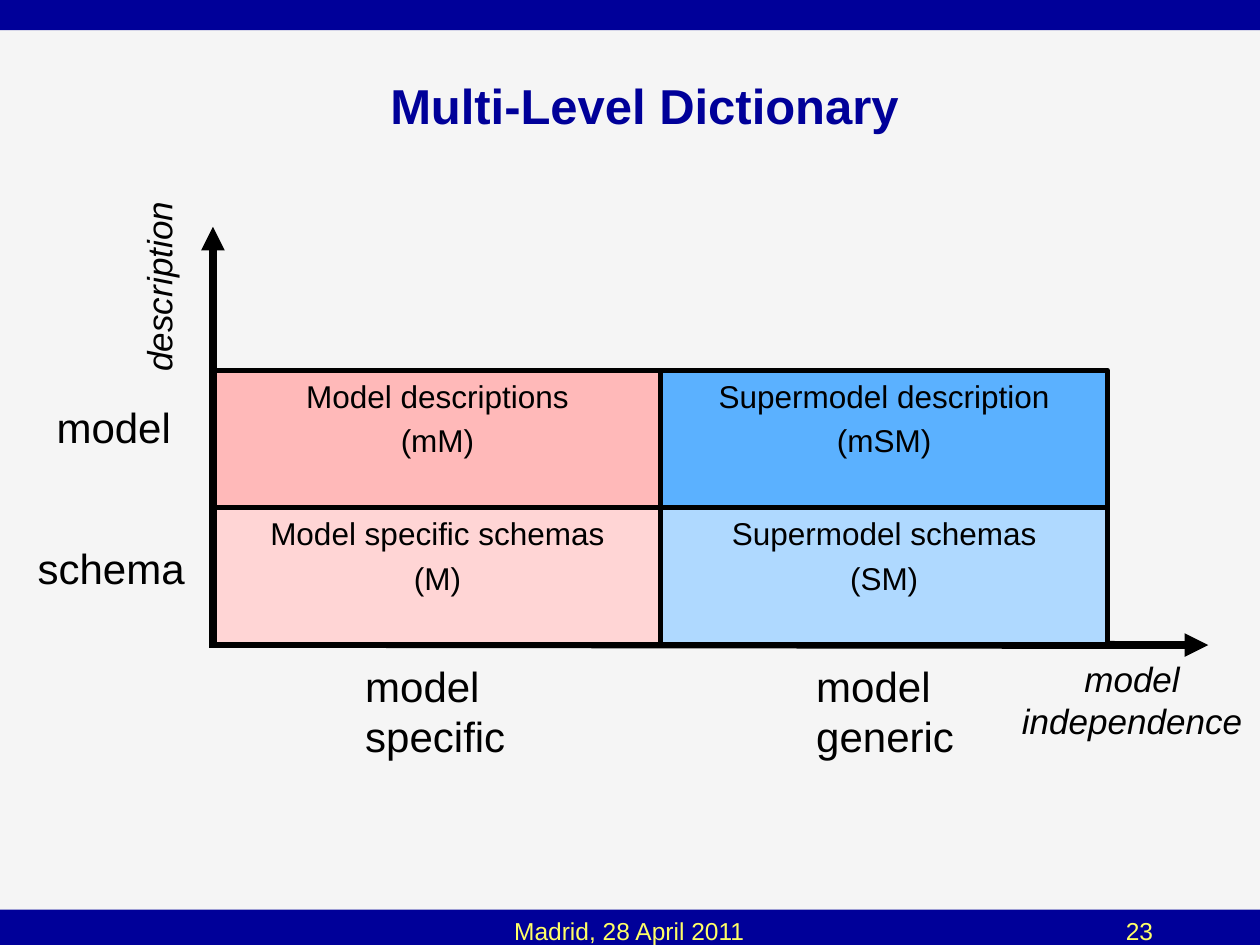
"""Build the Multi-Level Dictionary slide: a two-by-two matrix on two axes."""
import lxml.etree
import pptx
import pptx.dml.color
import pptx.enum.shapes
import pptx.enum.text
import pptx.oxml.ns
import pptx.util

Inches = pptx.util.Inches
ALIGN = pptx.enum.text.PP_ALIGN
ANCHOR = pptx.enum.text.MSO_ANCHOR
SHAPE = pptx.enum.shapes.MSO_SHAPE

THEME = {
    "font": "Arial", "paper": "F5F5F5", "navy": "000099", "yellow": "FFFF66", "ink": "000000",
    "title": 28, "label": 24, "axis": 20, "cell": 18, "footer": 14,
    "cell_line": 3, "axis_line": 4.5, "cell_gap": 4,
}

TITLE = ("Multi-Level Dictionary", (0.43, 0.25, 9.37, 1.17))
BARS = [(0, 0, 10, 0.24), (0, 7.22, 10, 0.28)]
FOOTERS = [
    ("Madrid, 28 April 2011", (2.16, 7.22, 5.67, 0.5), ALIGN.CENTER),
    ("23", (7.91, 7.22, 1.34, 0.5), ALIGN.RIGHT),
]
AXES = [((1.69, 5.09), (1.69, 1.8)), ((1.66, 5.11), (9.59, 5.12))]
LABELS = [
    ("model", (0.35, 3.14, 1.11, 0.5)),
    ("schema", (0.2, 4.26, 1.37, 0.5)),
    ("model\nspecific", (2.8, 5.19, 1.31, 0.9)),
    ("model\ngeneric", (6.38, 5.19, 1.3, 0.9)),
]
AXIS_NAMES = [
    ("description", (0.48, 2.06, 1.55, 0.43), 270),
    ("model\nindependence", (8.01, 5.17, 1.95, 0.77), 0),
]
MATRIX = [
    [("Model descriptions\n(mM)", "FFB9B9"), ("Supermodel description\n(mSM)", "5BB1FF")],
    [("Model specific schemas\n(M)", "FFD5D5"), ("Supermodel schemas\n(SM)", "AFD9FF")],
]
MATRIX_LEFT, MATRIX_TOP = 1.7, 2.94
CELL_WIDTH, CELL_HEIGHT = 3.545, 1.09


def colour(name):
    return pptx.dml.color.RGBColor.from_string(THEME.get(name, name))


def place(shape, area):
    shape.left, shape.top, shape.width, shape.height = map(Inches, area)


def write(shape, text, size, ink="ink", align=ALIGN.LEFT, anchor=ANCHOR.TOP,
          wrap=True, bold=False, italic=False, gap=0):
    frame = shape.text_frame
    frame.word_wrap = wrap
    frame.vertical_anchor = anchor
    for index, line in enumerate(text.split("\n")):
        para = frame.add_paragraph() if index else frame.paragraphs[0]
        para.alignment = align
        para.space_before = pptx.util.Pt(gap if index else 0)
        span = para.add_run()
        span.text = line
        span.font.name = THEME["font"]
        span.font.size = pptx.util.Pt(THEME[size])
        span.font.color.rgb = colour(ink)
        span.font.bold, span.font.italic = bold, italic


def add_text(page, text, area, size, **style):
    box = page.shapes.add_textbox(*map(Inches, area))
    write(box, text, size, **style)
    return box


def add_block(page, area, fill, line=None):
    block = page.shapes.add_shape(SHAPE.RECTANGLE, *map(Inches, area))
    block.shadow.inherit = False
    block.fill.solid()
    block.fill.fore_color.rgb = colour(fill)
    if line:
        block.line.color.rgb = colour("ink")
        block.line.width = pptx.util.Pt(line)
    else:
        block.line.fill.background()
    return block


def add_axis(page, start, end):
    axis = page.shapes.add_connector(
        pptx.enum.shapes.MSO_CONNECTOR.STRAIGHT, *map(Inches, start + end))
    axis.line.color.rgb = colour("ink")
    axis.line.width = pptx.util.Pt(THEME["axis_line"])
    tail = lxml.etree.SubElement(axis.line._get_or_add_ln(), pptx.oxml.ns.qn("a:tailEnd"))
    tail.set("type", "triangle")
    lxml.etree.SubElement(axis._element.spPr, pptx.oxml.ns.qn("a:effectLst"))


def main():
    deck = pptx.Presentation()
    deck.slide_width, deck.slide_height = Inches(10), Inches(7.5)
    page = deck.slides.add_slide(deck.slide_layouts.get_by_name("Title Only"))
    page.background.fill.solid()
    page.background.fill.fore_color.rgb = colour("paper")

    for area in BARS:
        add_block(page, area, "navy")
    for text, area, align in FOOTERS:
        add_text(page, text, area, "footer", ink="yellow", align=align)

    title, area = TITLE
    place(page.shapes.title, area)
    write(page.shapes.title, title, "title", ink="navy", align=ALIGN.CENTER,
          anchor=ANCHOR.MIDDLE, bold=True)

    for start, end in AXES:
        add_axis(page, start, end)
    for text, area in LABELS:
        add_text(page, text, area, "label", wrap=False)
    for text, area, angle in AXIS_NAMES:
        name = add_text(page, text, area, "axis", align=ALIGN.CENTER, wrap=False, italic=True)
        name.rotation = angle

    for row, cells in enumerate(MATRIX):
        for column, (text, fill) in enumerate(cells):
            area = (MATRIX_LEFT + column * CELL_WIDTH, MATRIX_TOP + row * CELL_HEIGHT,
                    CELL_WIDTH, CELL_HEIGHT)
            block = add_block(page, area, fill, line=THEME["cell_line"])
            write(block, text, "cell", align=ALIGN.CENTER, gap=THEME["cell_gap"])

    deck.save("out.pptx")


if __name__ == "__main__":
    main()
